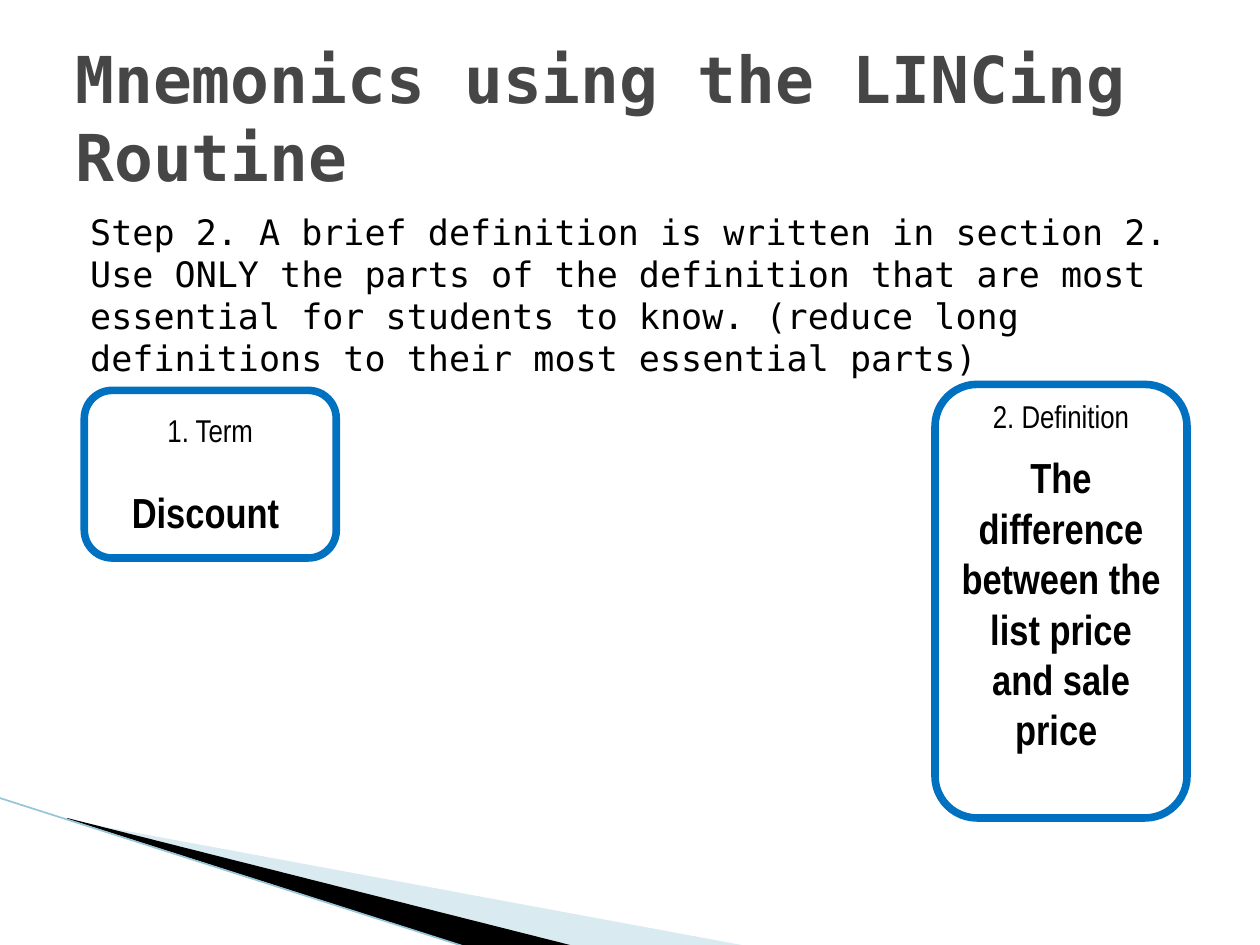
from dataclasses import dataclass

from lxml import etree
from pptx import Presentation
from pptx.dml.color import RGBColor
from pptx.enum.shapes import MSO_CONNECTOR, MSO_SHAPE
from pptx.enum.text import MSO_ANCHOR, PP_ALIGN
from pptx.oxml.ns import qn
from pptx.util import Cm, Pt

STRAIGHT = MSO_CONNECTOR.STRAIGHT
ROUNDED = MSO_SHAPE.ROUNDED_RECTANGLE
TOP, MIDDLE = MSO_ANCHOR.TOP, MSO_ANCHOR.MIDDLE
LEFT, CENTER = PP_ALIGN.LEFT, PP_ALIGN.CENTER
BLANK_LAYOUT = 6


@dataclass(frozen=True)
class Theme:
    heading_font: str = "DejaVu Sans Mono"
    card_font: str = "Arial Narrow"
    ink: str = "000000"
    heading: str = "464646"
    border: str = "0070C0"
    pale_wedge: str = "A0CBDC"
    edge: str = "97C5D8"
    title_size: float = 36.9
    body_size: float = 20
    label_size: float = 18
    answer_size: float = 24


@dataclass(frozen=True)
class Box:
    """A region of the slide, in centimetres."""
    left: float
    top: float
    width: float
    height: float

    def emu(self):
        return Cm(self.left), Cm(self.top), Cm(self.width), Cm(self.height)

    def point(self, x, y):
        return Cm(self.left + x), Cm(self.top + y)


THEME = Theme()


def write(paragraph, text, *, font, size, color=THEME.ink, bold=False,
          align=LEFT, before=0):
    paragraph.alignment = align
    if before:
        paragraph.space_before = Pt(before)
    run = paragraph.add_run()
    run.text = text
    run.font.name = font
    run.font.size = Pt(size)
    run.font.bold = bold
    run.font.color.rgb = RGBColor.from_string(color)


def add_text(slide, box, text, *, anchor=TOP, indent=0, **text_format):
    frame = slide.shapes.add_textbox(*box.emu()).text_frame
    frame.word_wrap = True
    frame.vertical_anchor = anchor
    frame.margin_left = Cm(0.25 + indent)
    write(frame.paragraphs[0], text, font=THEME.heading_font, **text_format)


def add_card(slide, box, label, answer, *, gap, space_below=0):
    """Outlined card with a small label above a bold answer; gaps in points."""
    card = slide.shapes.add_shape(ROUNDED, *box.emu())
    card.shadow.inherit = False
    card.fill.background()
    card.line.color.rgb = RGBColor.from_string(THEME.border)
    card.line.width = Pt(4.33)
    frame = card.text_frame
    frame.word_wrap = True
    frame.vertical_anchor = MIDDLE
    frame.margin_bottom = Cm(0.13) + Pt(space_below)
    write(frame.paragraphs[0], label, font=THEME.card_font,
          size=THEME.label_size, align=CENTER)
    write(frame.add_paragraph(), answer, font=THEME.card_font,
          size=THEME.answer_size, bold=True, align=CENTER, before=gap)


def add_wedge(slide, box, points, color, opacity=100):
    start, *others = [box.point(x, y) for x, y in points]
    builder = slide.shapes.build_freeform(*start, scale=1.0)
    builder.add_line_segments(others, close=True)
    wedge = builder.convert_to_shape()
    wedge.shadow.inherit = False
    wedge.line.fill.background()
    wedge.fill.solid()
    wedge.fill.fore_color.rgb = RGBColor.from_string(color)
    if opacity < 100:
        fill_color = wedge.fill._xPr.find(qn("a:solidFill"))[0]
        etree.SubElement(fill_color, qn("a:alpha"), val=str(opacity * 1000))


def add_corner(slide, box):
    """Sweeping wedges and edge line at the lower left."""
    add_wedge(slide, box, [(1.4, 0.46), (15.11, 3), (11.58, 3), (1.4, 0.43)],
              THEME.pale_wedge, opacity=40)
    add_wedge(slide, box, [(1.35, 0.41), (11.61, 3), (9.45, 3.02), (1.37, 0.43)],
              THEME.ink)
    edge = slide.shapes.add_connector(
        STRAIGHT, *box.point(-0.03, 0), *box.point(9.42, 3.02))
    edge.line.color.rgb = RGBColor.from_string(THEME.edge)
    edge.line.width = Pt(0.95)
    etree.SubElement(edge.line._get_or_add_ln().getparent(), qn("a:effectLst"))


def main():
    deck = Presentation()
    deck.slide_width, deck.slide_height = Cm(25.4), Cm(19.05)
    slide = deck.slides.add_slide(deck.slide_layouts[BLANK_LAYOUT])

    add_corner(slide, Box(0, 16.08, 15.11, 3.02))
    add_text(slide, Box(1.27, 4.11, 22.86, 12.57),
             "Step 2. A brief definition is written in section 2. Use ONLY the "
             "parts of the definition that are most essential for students to "
             "know. (reduce long definitions to their most essential parts)",
             size=THEME.body_size, indent=0.3)
    add_text(slide, Box(1.27, 0.76, 22.86, 3.18),
             "Mnemonics using the LINCing Routine", anchor=MIDDLE,
             size=THEME.title_size, color=THEME.heading, bold=True)
    add_card(slide, Box(1.7, 7.87, 5.08, 3.38), "1. Term", "Discount ", gap=21.6)
    add_card(slide, Box(18.85, 7.75, 5.08, 8.74), "2. Definition",
             "The difference between the list price and sale price ",
             gap=9.6, space_below=28.8)

    deck.save("out.pptx")


if __name__ == "__main__":
    main()
